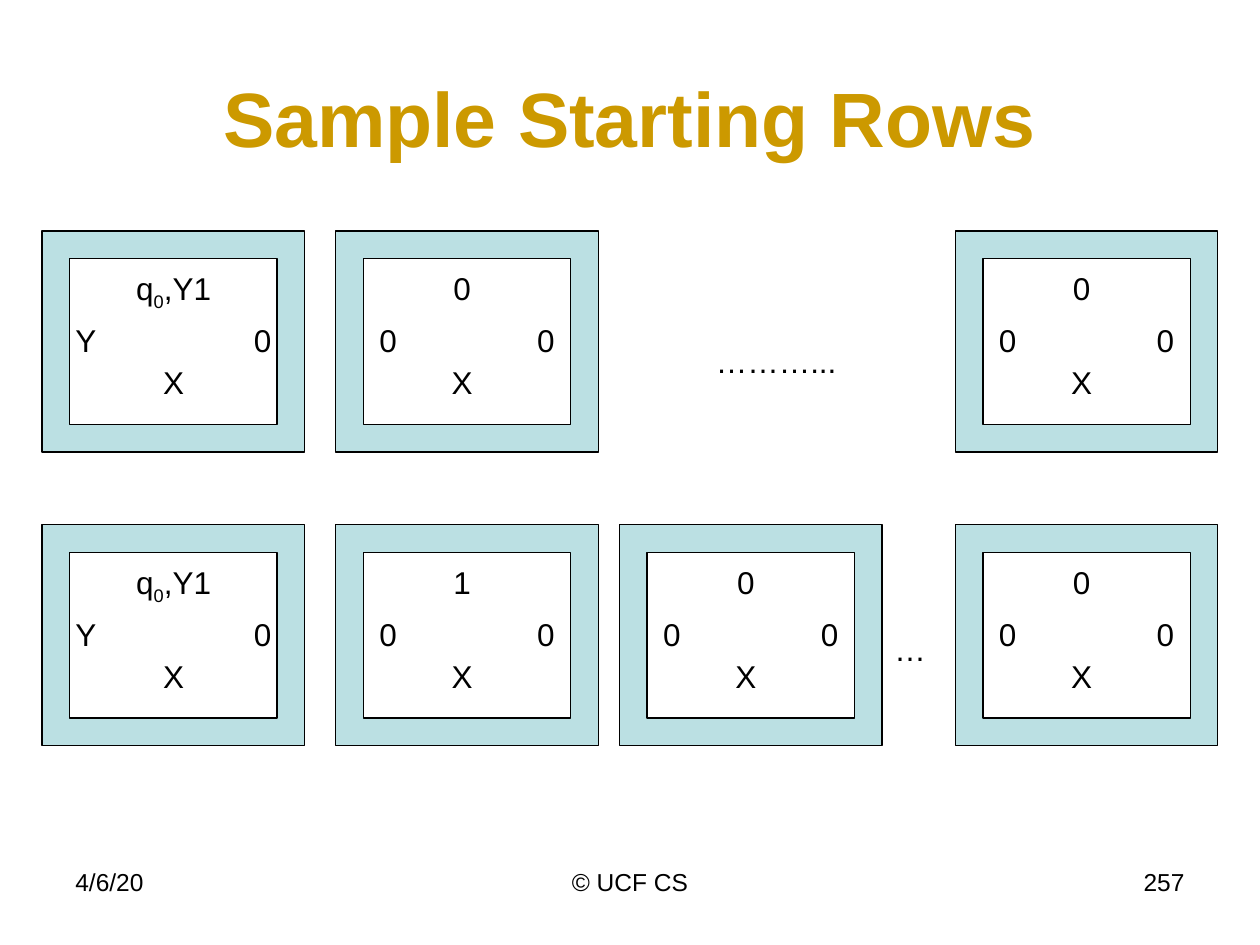
"""Build the slide that shows sample starting rows of tiles."""
from pptx import Presentation
from pptx.dml.color import RGBColor
from pptx.enum.shapes import MSO_SHAPE as Shape
from pptx.enum.text import MSO_ANCHOR as Anchor, MSO_AUTO_SIZE as AutoSize, PP_ALIGN as Align
from pptx.util import Cm, Pt


def color(hex_text):
    """Turn a hex string into a colour."""
    return RGBColor.from_string(hex_text)


def add_text(left, top, width, height, pieces, align, size=18):
    """Add a text box whose second piece, if any, is a subscript."""
    box = slide.shapes.add_textbox(Cm(left), Cm(top), Cm(width), Cm(height))
    box.text_frame.word_wrap = True
    box.text_frame.auto_size = AutoSize.SHAPE_TO_FIT_TEXT if size == 18 else AutoSize.NONE
    para = box.text_frame.paragraphs[0]
    para.alignment = align
    for index, piece in enumerate(pieces):
        span = para.add_run()
        span.text = piece
        span.font.name = "Arial"
        span.font.size = Pt(size)
        span.font.color.rgb = color("000000")
        if index == 1:
            span.font._element.set("baseline", "-25000")


deck = Presentation()
deck.slide_width, deck.slide_height = Cm(25.4), Cm(19.05)
slide = deck.slides.add_slide(deck.slide_layouts[5])

title = slide.shapes.title
title.left, title.top, title.width, title.height = Cm(1.27), Cm(0.76), Cm(22.86), Cm(3.18)
title.text_frame.text = "Sample Starting Rows"
title.text_frame.vertical_anchor = Anchor.MIDDLE
title_para = title.text_frame.paragraphs[0]
title_para.alignment = Align.CENTER
title_font = title_para.runs[0].font
title_font.name, title_font.size, title_font.bold = "Arial", Pt(44), True
title_font.color.rgb = color("CC9900")

footers = [
    (1.27, 5.93, "4/6/20", Align.LEFT),
    (8.68, 8.04, "© UCF CS", Align.CENTER),
    (18.2, 5.93, "257", Align.RIGHT),
]
for left, width, text, align in footers:
    add_text(left, 17.36, width, 1.32, [text], align, size=14)

start_labels = [
    (0.64, 0.64, 4.02, ["q", "0", ",Y1"], Align.CENTER),
    (2.75, 1.69, 2.12, ["0"], Align.RIGHT),
    (0.42, 1.69, 2.33, ["Y"], Align.LEFT),
    (0.64, 2.54, 4.02, ["X"], Align.CENTER),
]
columns = [0.85, 6.77, 12.49, 19.26]
rows = [
    (4.66, {0: "start", 1: "0", 3: "0"}),
    (10.58, {0: "start", 1: "1", 2: "0", 3: "0"}),
]
for row_top, tiles in rows:
    for column, top_label in tiles.items():
        tile_left = columns[column]
        frame = slide.shapes.add_shape(Shape.FRAME, Cm(tile_left), Cm(row_top), Cm(5.29), Cm(4.45))
        frame.shadow.inherit = False
        frame.fill.solid()
        frame.fill.fore_color.rgb = color("BBE0E3")
        frame.line.color.rgb = color("000000")
        frame.line.width = Pt(0.75)
        labels = start_labels if top_label == "start" else [
            (1.91, 0.64, 1.27, [top_label], Align.CENTER),
            (3.6, 1.69, 1.27, ["0"], Align.CENTER),
            (0.42, 1.69, 1.27, ["0"], Align.CENTER),
            (1.91, 2.54, 1.27, ["X"], Align.CENTER),
        ]
        for left, top, width, pieces, align in labels:
            add_text(tile_left + left, row_top + top, width, 1.27, pieces, align)

add_text(14.18, 6.77, 3.81, 1.27, ["………..."], Align.LEFT)
add_text(17.78, 12.57, 1.27, 1.27, ["…"], Align.LEFT)

deck.save("out.pptx")
